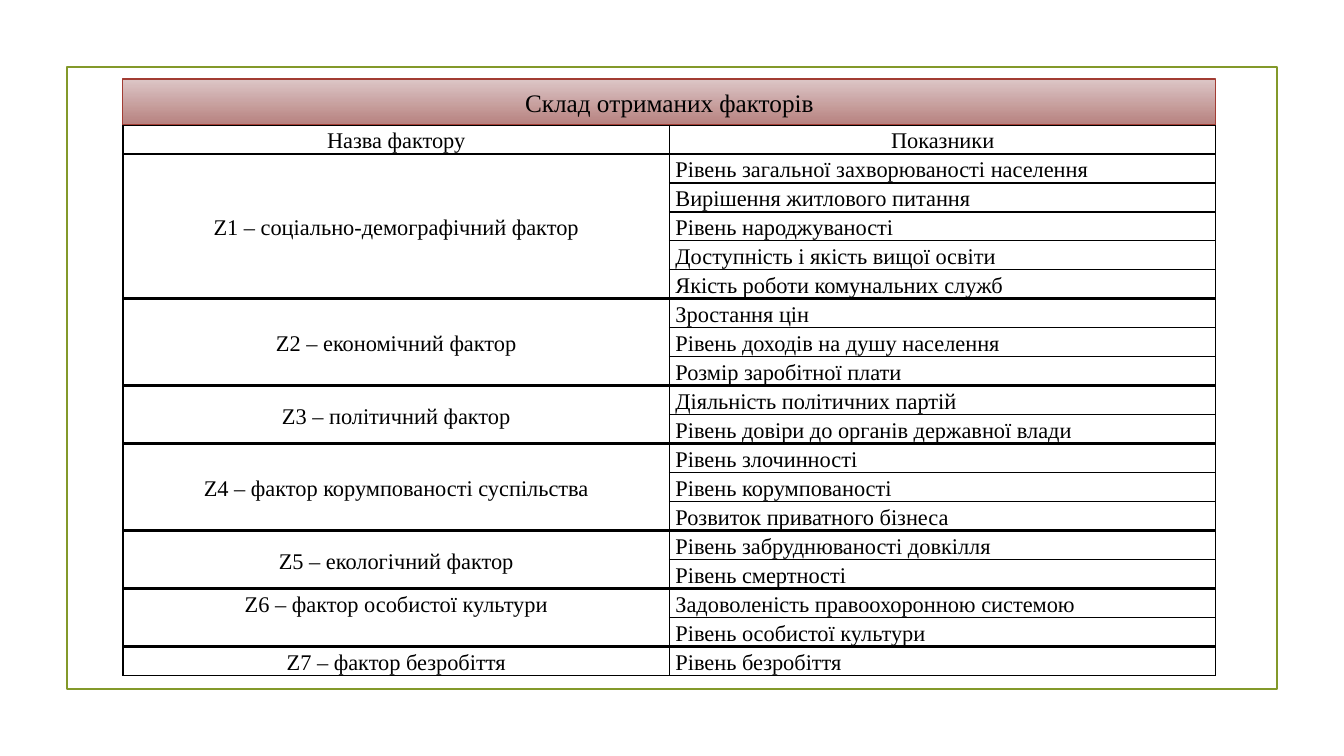
from lxml.etree import SubElement
from pptx import Presentation
from pptx.dml.color import RGBColor
from pptx.enum.shapes import MSO_SHAPE
from pptx.enum.text import MSO_ANCHOR, PP_ALIGN
from pptx.oxml.ns import qn
from pptx.util import Pt

TITLE = "Склад отриманих факторів"
HEADINGS = ("Назва фактору", "Показники")
FACTORS = [
    ("Z1 – соціально-демографічний фактор", MSO_ANCHOR.MIDDLE, [
        "Рівень загальної захворюваності населення",
        "Вирішення житлового питання",
        "Рівень народжуваності",
        "Доступність і якість вищої освіти",
        "Якість роботи комунальних служб"]),
    ("Z2 – економічний фактор", MSO_ANCHOR.MIDDLE, [
        "Зростання цін",
        "Рівень доходів на душу населення",
        "Розмір заробітної плати"]),
    ("Z3 – політичний фактор", MSO_ANCHOR.MIDDLE, [
        "Діяльність політичних партій",
        "Рівень довіри до органів державної влади"]),
    ("Z4 – фактор корумпованості суспільства", MSO_ANCHOR.MIDDLE, [
        "Рівень злочинності",
        "Рівень корумпованості",
        "Розвиток приватного бізнеса"]),
    ("Z5 – екологічний фактор", MSO_ANCHOR.MIDDLE, [
        "Рівень забруднюваності довкілля",
        "Рівень смертності"]),
    ("Z6 – фактор особистої культури", MSO_ANCHOR.TOP, [
        "Задоволеність правоохоронною системою",
        "Рівень особистої культури"]),
    ("Z7 – фактор безробіття", MSO_ANCHOR.TOP, ["Рівень безробіття"]),
]

FONT = "Times New Roman"
BLACK, OLIVE, RED = "000000", "83992A", "A23C33"
BANNER_COLORS = ("DCC6C6", "B7817F")
THIN, THICK = 1, 2.25
LEFT, WIDTH = 123, 1093
BANNER_TOP, BANNER_HEIGHT = 79, 46
ROW_HEIGHT, CELL_INSET = 29, 6


def px(length):
    """Turn pixels into EMU."""
    return round(length * 914400 / 100.8)


def color(code):
    """Turn a hex string into a colour."""
    return RGBColor.from_string(code)


def write(frame, text, size=16, align=PP_ALIGN.LEFT, spacing=None):
    """Put one formatted line of text into a text frame."""
    para = frame.paragraphs[0]
    para.alignment = align
    para.line_spacing = spacing
    span = para.add_run()
    span.text = text
    span.font.name = FONT
    span.font.size = Pt(size)
    span.font.color.rgb = color(BLACK)


def add_box(page, left, top, width, height, line, weight):
    """Add an unfilled rectangle with an outline."""
    box = page.shapes.add_shape(MSO_SHAPE.RECTANGLE, px(left), px(top), px(width), px(height))
    box.shadow.inherit = False
    box.fill.background()
    box.line.color.rgb = color(line)
    box.line.width = Pt(weight)
    return box


def style_cell(cell, top, bottom):
    """Clear the fill, set the insets and draw the four borders."""
    cell.fill.background()
    cell.margin_left = cell.margin_right = px(CELL_INSET)
    cell.margin_top = cell.margin_bottom = 0
    properties = cell._tc.get_or_add_tcPr()
    borders = (("a:lnL", THIN), ("a:lnR", THIN), ("a:lnT", top), ("a:lnB", bottom))
    for place, (tag, weight) in enumerate(borders):
        border = SubElement(properties, qn(tag), w=str(Pt(weight)))
        SubElement(SubElement(border, qn("a:solidFill")), qn("a:srgbClr"), val=BLACK)
        properties.insert(place, border)


def add_factor_table(page):
    """Add the table with one merged name cell for each factor."""
    row_count = 1 + sum(len(indicators) for _, _, indicators in FACTORS)
    table = page.shapes.add_table(row_count, 2, px(LEFT), px(BANNER_TOP + BANNER_HEIGHT),
                                  px(WIDTH), px(row_count * ROW_HEIGHT)).table
    table.first_row = table.horz_banding = False
    for column, heading in enumerate(HEADINGS):
        cell = table.cell(0, column)
        style_cell(cell, THIN, THICK)
        write(cell.text_frame, heading, align=PP_ALIGN.CENTER, spacing=1.15)
    start = 1
    for name, anchor, indicators in FACTORS:
        last = start + len(indicators) - 1
        end_weight = THIN if last == row_count - 1 else THICK
        for row, indicator in enumerate(indicators, start):
            style_cell(table.cell(row, 0), THICK, end_weight)
            cell = table.cell(row, 1)
            style_cell(cell, THICK if row == start else THIN,
                       end_weight if row == last else THIN)
            write(cell.text_frame, indicator, spacing=1.15)
        name_cell = table.cell(start, 0)
        if last > start:
            name_cell.merge(table.cell(last, 0))
        name_cell.vertical_anchor = anchor
        write(name_cell.text_frame, name, align=PP_ALIGN.CENTER, spacing=1.15)
        start = last + 1


def add_banner(page):
    """Add the gradient title bar above the table."""
    banner = add_box(page, LEFT, BANNER_TOP, WIDTH, BANNER_HEIGHT, RED, 0.75)
    banner.fill.gradient()
    banner.fill.gradient_angle = 270
    for stop, code in zip(banner.fill.gradient_stops, BANNER_COLORS):
        stop.color.rgb = color(code)
    banner.text_frame.vertical_anchor = MSO_ANCHOR.MIDDLE
    write(banner.text_frame, TITLE, size=18, align=PP_ALIGN.CENTER)


def main():
    """Build the slide and save it."""
    deck = Presentation()
    deck.slide_width, deck.slide_height = px(1344), px(756)
    page = deck.slides.add_slide(deck.slide_layouts[6])
    add_box(page, 67, 67, 1210, 622, OLIVE, 1.25)
    add_factor_table(page)
    add_banner(page)
    deck.save("out.pptx")


if __name__ == "__main__":
    main()
